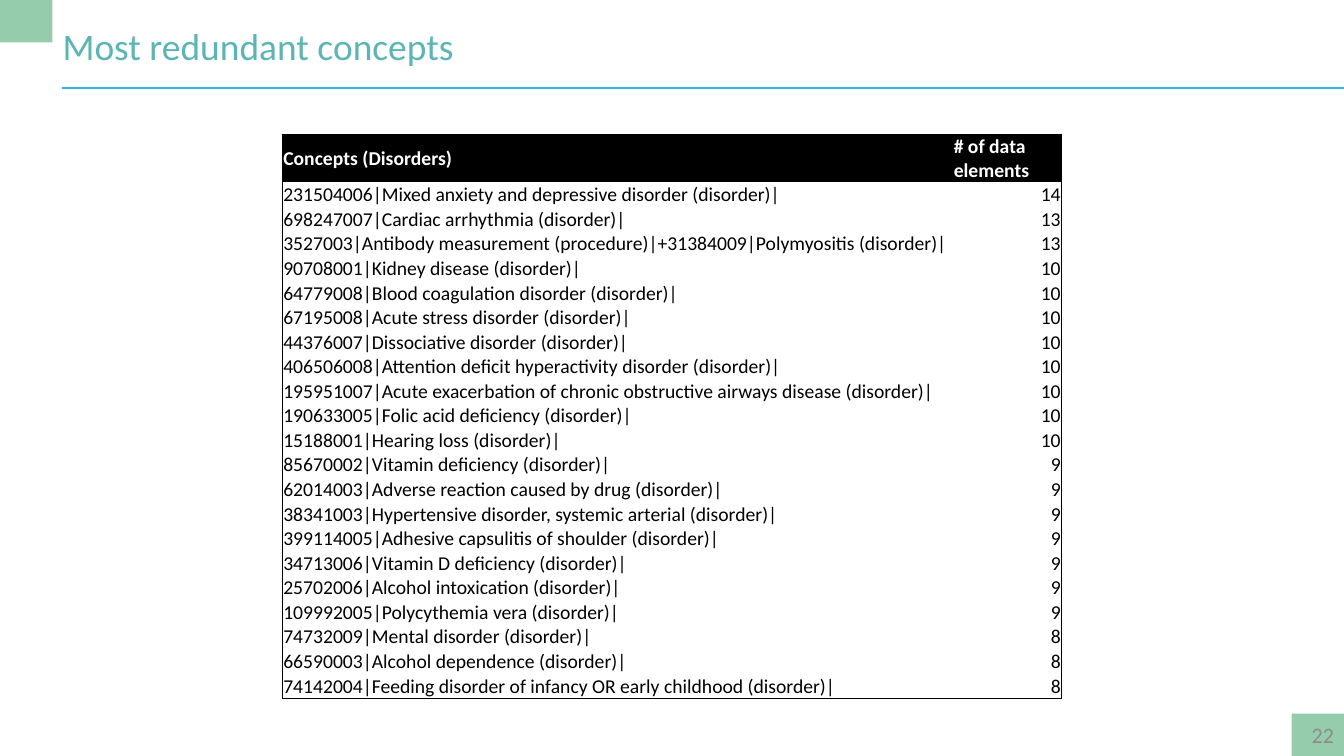
from lxml import etree
from pptx import Presentation
from pptx import util as u
from pptx.dml.color import RGBColor
from pptx.enum import shapes, text
from pptx.oxml import ns

FONT = "Calibri"
GREEN, TEAL, BLUE, GREY = "94CCAC", "59B6B3", "34B4E5", "8C8C8C"
BLACK, WHITE = "000000", "FFFFFF"
NO_STYLE_NO_GRID = "{2D5ABB26-0587-4C30-8999-92F81FD0307C}"
SLIDE_WIDTH, SLIDE_HEIGHT = 13.33, 7.5
CORNER_WIDTH, CORNER_HEIGHT = 0.52, 0.42

HEADINGS = ("Concepts (Disorders)", "# of data\velements")
CONCEPTS = [
    ("231504006|Mixed anxiety and depressive disorder (disorder)|", 14),
    ("698247007|Cardiac arrhythmia (disorder)|", 13),
    ("3527003|Antibody measurement (procedure)|+31384009|Polymyositis (disorder)|", 13),
    ("90708001|Kidney disease (disorder)|", 10),
    ("64779008|Blood coagulation disorder (disorder)|", 10),
    ("67195008|Acute stress disorder (disorder)|", 10),
    ("44376007|Dissociative disorder (disorder)|", 10),
    ("406506008|Attention deficit hyperactivity disorder (disorder)|", 10),
    ("195951007|Acute exacerbation of chronic obstructive airways disease (disorder)|", 10),
    ("190633005|Folic acid deficiency (disorder)|", 10),
    ("15188001|Hearing loss (disorder)|", 10),
    ("85670002|Vitamin deficiency (disorder)|", 9),
    ("62014003|Adverse reaction caused by drug (disorder)|", 9),
    ("38341003|Hypertensive disorder, systemic arterial (disorder)|", 9),
    ("399114005|Adhesive capsulitis of shoulder (disorder)|", 9),
    ("34713006|Vitamin D deficiency (disorder)|", 9),
    ("25702006|Alcohol intoxication (disorder)|", 9),
    ("109992005|Polycythemia vera (disorder)|", 9),
    ("74732009|Mental disorder (disorder)|", 8),
    ("66590003|Alcohol dependence (disorder)|", 8),
    ("74142004|Feeding disorder of infancy OR early childhood (disorder)|", 8),
]


def color(value):
    return RGBColor.from_string(value)


def format_text(frame, size, hue, bold=False, align=text.PP_ALIGN.LEFT):
    for paragraph in frame.paragraphs:
        paragraph.alignment = align
        for run in paragraph.runs:
            run.font.name = FONT
            run.font.size = u.Pt(size)
            run.font.bold = bold
            run.font.color.rgb = color(hue)


def add_corner(slide, left, top):
    corner = slide.shapes.add_shape(
        shapes.MSO_SHAPE.RECTANGLE, u.Inches(left), u.Inches(top),
        u.Inches(CORNER_WIDTH), u.Inches(CORNER_HEIGHT))
    corner.shadow.inherit = False
    corner.fill.solid()
    corner.fill.fore_color.rgb = color(GREEN)
    corner.line.fill.background()


def add_heading(slide, left, top, width, height):
    add_corner(slide, 0, 0)
    rule_top = u.Inches(top + 0.64)
    rule = slide.shapes.add_connector(
        shapes.MSO_CONNECTOR.STRAIGHT, u.Inches(left), rule_top,
        u.Inches(SLIDE_WIDTH), rule_top)
    rule.line.color.rgb = color(BLUE)
    rule.line.width = u.Pt(1.42)
    etree.SubElement(rule._element.spPr, ns.qn("a:effectLst"))

    title = slide.shapes.title
    title.left, title.top = u.Inches(left), u.Inches(top)
    title.width, title.height = u.Inches(width), u.Inches(height)
    frame = title.text_frame
    frame.text = "Most redundant concepts"
    frame.auto_size = text.MSO_AUTO_SIZE.NONE
    frame.vertical_anchor = text.MSO_ANCHOR.TOP
    frame.margin_left = frame.margin_right = 0
    frame.margin_top = frame.margin_bottom = 0
    format_text(frame, 26.7, TEAL)


def add_page_number(slide, left, top, width, height):
    add_corner(slide, SLIDE_WIDTH - CORNER_WIDTH, SLIDE_HEIGHT - CORNER_HEIGHT)
    number = slide.shapes.add_textbox(
        u.Inches(left), u.Inches(top), u.Inches(width), u.Inches(height))
    frame = number.text_frame
    frame.word_wrap = True
    frame.vertical_anchor = text.MSO_ANCHOR.MIDDLE
    frame.text = "22"
    format_text(frame, 15.8, GREY, align=text.PP_ALIGN.RIGHT)


def add_borders(cell, sides):
    properties = cell._tc.get_or_add_tcPr()
    for position, side in enumerate(sides):
        border = etree.Element(ns.qn(f"a:ln{side}"), w=str(u.Pt(0.75)))
        fill = etree.SubElement(border, ns.qn("a:solidFill"))
        etree.SubElement(fill, ns.qn("a:srgbClr"), val=BLACK)
        properties.insert(position, border)


def fill_cell(cell, content, is_header, is_count):
    cell.margin_left = cell.margin_right = cell.margin_top = u.Inches(0.01)
    cell.margin_bottom = 0
    cell.vertical_anchor = text.MSO_ANCHOR.MIDDLE if is_header else text.MSO_ANCHOR.BOTTOM
    cell.fill.solid()
    cell.fill.fore_color.rgb = color(BLACK if is_header else WHITE)
    cell.text_frame.text = str(content)
    align = text.PP_ALIGN.RIGHT if is_count and not is_header else text.PP_ALIGN.LEFT
    format_text(cell.text_frame, 14, WHITE if is_header else BLACK, is_header, align)


def add_concepts(slide, left, top, width, height):
    rows = [HEADINGS, *CONCEPTS]
    count_width, header_height = 1.08, 0.47
    table = slide.shapes.add_table(
        len(rows), 2, u.Inches(left), u.Inches(top),
        u.Inches(width), u.Inches(height)).table
    table.first_row = table.horz_banding = False
    table._tbl.tblPr.find(ns.qn("a:tableStyleId")).text = NO_STYLE_NO_GRID
    table.columns[0].width = u.Inches(width - count_width)
    table.columns[1].width = u.Inches(count_width)
    row_height = (height - header_height) / len(CONCEPTS)
    for index, row in enumerate(rows):
        table.rows[index].height = u.Inches(row_height if index else header_height)
        edge = "T" if index == 0 else "B" if index == len(CONCEPTS) else ""
        for column, content in enumerate(row):
            cell = table.cell(index, column)
            fill_cell(cell, content, index == 0, column == 1)
            add_borders(cell, "LR"[column] + edge)


def main():
    deck = Presentation()
    deck.slide_width = u.Inches(SLIDE_WIDTH)
    deck.slide_height = u.Inches(SLIDE_HEIGHT)
    slide = deck.slides.add_slide(deck.slide_layouts[5])
    add_heading(slide, 0.62, 0.23, 11.81, 0.45)
    add_page_number(slide, 11.95, 7.09, 1.38, 0.4)
    add_concepts(slide, 2.8, 1.33, 7.73, 5.58)
    deck.save("out.pptx")


if __name__ == "__main__":
    main()
